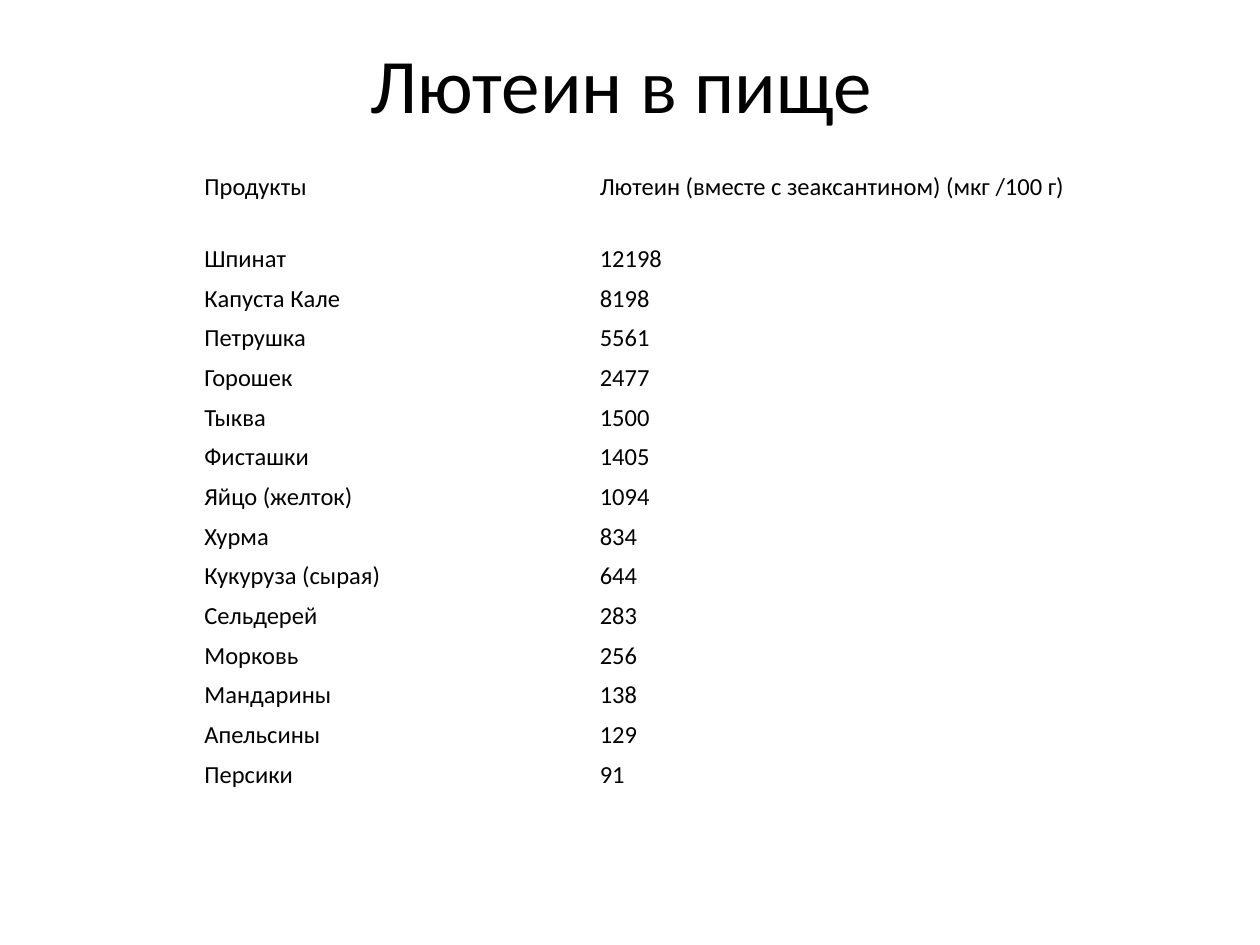
from pptx import Presentation
from pptx.dml.color import RGBColor
from pptx.enum.text import MSO_ANCHOR as Anchor, PP_ALIGN as Align
from pptx.util import Cm, Pt

BLACK = RGBColor(0x00, 0x00, 0x00)
FONT_NAME = "Calibri"
TITLE = "Лютеин в пище"
HEADER = ("Продукты", "Лютеин (вместе с зеаксантином) (мкг /100 г)")
LUTEIN_CONTENT = {
    "Шпинат": 12198,
    "Капуста Кале": 8198,
    "Петрушка": 5561,
    "Горошек": 2477,
    "Тыква": 1500,
    "Фисташки": 1405,
    "Яйцо (желток)": 1094,
    "Хурма": 834,
    "Кукуруза (сырая)": 644,
    "Сельдерей": 283,
    "Морковь": 256,
    "Мандарины": 138,
    "Апельсины": 129,
    "Персики": 91,
}
CELL_FORMAT = {
    "vertical_anchor": Anchor.MIDDLE,
    "margin_left": Cm(0.2),
    "margin_right": Cm(0.2),
    "margin_top": Cm(0.1),
    "margin_bottom": Cm(0.1),
}
TABLE_FORMAT = {"first_row": False, "horz_banding": False}


def apply_format(target, values):
    """Set every attribute of the target from a dict of values."""
    for name, value in values.items():
        setattr(target, name, value)


def write_text(paragraph, text, size, alignment):
    """Fill a paragraph with black text of the given size."""
    paragraph.text = text
    paragraph.alignment = alignment
    apply_format(paragraph.font, {"name": FONT_NAME, "size": Pt(size)})
    paragraph.font.color.rgb = BLACK


def add_title(slide, left, top, width, height):
    """Place the centred title in its box."""
    shape = slide.shapes.add_textbox(Cm(left), Cm(top), Cm(width), Cm(height))
    frame = shape.text_frame
    apply_format(frame, {"word_wrap": True, "vertical_anchor": Anchor.MIDDLE})
    write_text(frame.paragraphs[0], TITLE, 44, Align.CENTER)


def add_lutein_table(slide, left, top, width, height):
    """Place the plain table of products and their lutein content."""
    rows = [HEADER, *LUTEIN_CONTENT.items()]
    shape = slide.shapes.add_table(
        len(rows), len(HEADER), Cm(left), Cm(top), Cm(width), Cm(height)
    )
    table = shape.table
    apply_format(table, TABLE_FORMAT)
    product_width, header_height = 0.42 * width, 2.1
    row_height = (height - header_height) / len(LUTEIN_CONTENT)
    table.columns[0].width = Cm(product_width)
    table.columns[1].width = Cm(width - product_width)
    for row_index, values in enumerate(rows):
        table.rows[row_index].height = Cm(row_height if row_index else header_height)
        for column_index, value in enumerate(values):
            cell = table.cell(row_index, column_index)
            apply_format(cell, CELL_FORMAT)
            cell.fill.background()
            write_text(cell.text_frame.paragraphs[0], str(value), 14, Align.LEFT)


def main():
    """Build the slide and save it."""
    presentation = Presentation()
    apply_format(presentation, {"slide_width": Cm(25.4), "slide_height": Cm(19.05)})
    slide = presentation.slides.add_slide(presentation.slide_layouts[6])
    add_title(slide, 1.1, 0.08, 22.86, 3.18)
    add_lutein_table(slide, 3.92, 2.72, 18.98, 13.3)
    presentation.save("out.pptx")


if __name__ == "__main__":
    main()
